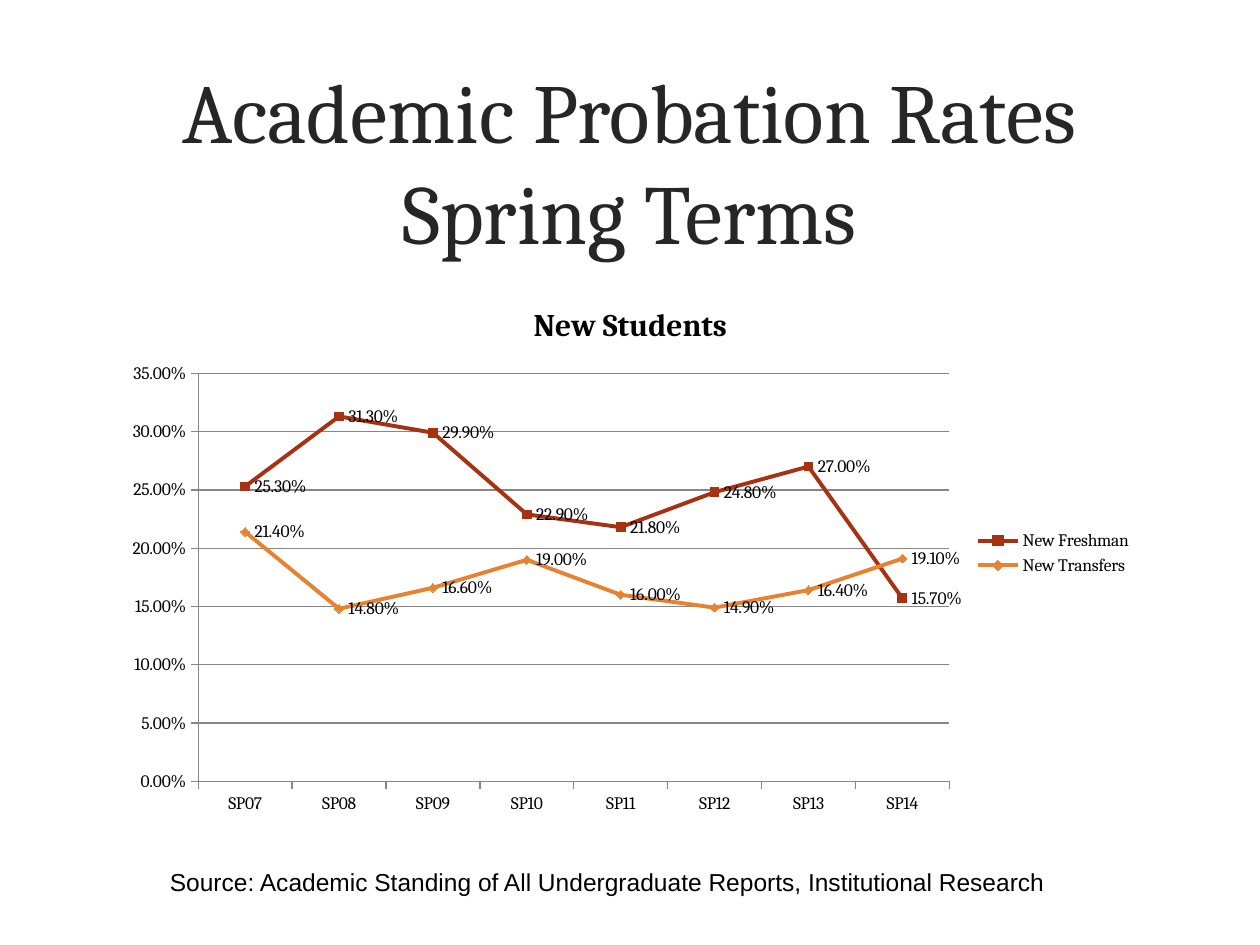
from lxml import etree
from pptx import Presentation
from pptx.chart.data import CategoryChartData
from pptx.dml.color import RGBColor
from pptx.enum.chart import XL_CHART_TYPE, XL_LEGEND_POSITION, XL_LABEL_POSITION, XL_MARKER_STYLE, XL_TICK_MARK
from pptx.enum.text import MSO_ANCHOR, PP_ALIGN
from pptx.oxml import parse_xml
from pptx.oxml.ns import nsdecls
from pptx.util import Pt

COLORS = {"title": "262626", "text": "000000", "axis": "868686",
          "freshman": "A63212", "transfers": "E68230"}
PERCENT = "0.00%"
TERMS = [f"SP{year:02}" for year in range(7, 15)]
RATES = [
    ("New Freshman", "freshman", XL_MARKER_STYLE.SQUARE,
     (0.253, 0.313, 0.299, 0.229, 0.218, 0.248, 0.27, 0.157)),
    ("New Transfers", "transfers", XL_MARKER_STYLE.DIAMOND,
     (0.214, 0.148, 0.166, 0.19, 0.16, 0.149, 0.164, 0.191)),
]


def color(name):
    return RGBColor.from_string(COLORS[name])


def style_font(font, name, size, color_name):
    font.name = name
    font.size = Pt(size)
    font.color.rgb = color(color_name)


def place(shape, box):
    shape.left, shape.top, shape.width, shape.height = (Pt(length) for length in box)


def add_title(page, box):
    title = page.shapes.title
    place(title, box)
    frame = title.text_frame
    frame.word_wrap = True
    frame.vertical_anchor = MSO_ANCHOR.MIDDLE
    para = frame.paragraphs[0]
    para.text = "Academic Probation Rates\vSpring Terms"
    para.alignment = PP_ALIGN.CENTER
    for span in para.runs:
        style_font(span.font, "Cambria", 48, "title")


def set_plot_layout(chart, x, y, width, height):
    """Fix the inner plot area, in fractions of the chart."""
    plot_area = chart.plots[0]._element.getparent()
    for old in plot_area.findall("{*}layout"):
        plot_area.remove(old)
    layout = parse_xml(f"<c:layout {nsdecls('c')}><c:manualLayout/></c:layout>")
    values = [("layoutTarget", "inner"), ("xMode", "edge"), ("yMode", "edge"),
              ("x", x), ("y", y), ("w", width), ("h", height)]
    for tag, value in values:
        item = etree.SubElement(layout[0], f"{{{layout.nsmap['c']}}}{tag}")
        item.set("val", str(value))
    plot_area.insert(0, layout)


def add_rate_chart(page, box):
    data = CategoryChartData(number_format=PERCENT)
    data.categories = TERMS
    for name, _, _, values in RATES:
        data.add_series(name, values)
    chart = page.shapes.add_chart(XL_CHART_TYPE.LINE_MARKERS,
                                  *(Pt(length) for length in box), data).chart
    style_font(chart.font, "Cambria", 10, "text")

    # Title and legend
    chart.has_title = True
    para = chart.chart_title.text_frame.paragraphs[0]
    para.text = "New Students"
    span = para.runs[0]
    style_font(span.font, "Cambria", 18, "text")
    span.font.bold = True
    chart.has_legend = True
    chart.legend.position = XL_LEGEND_POSITION.RIGHT
    chart.legend.include_in_layout = False

    # Axes
    for axis in (chart.category_axis, chart.value_axis):
        axis.major_tick_mark = XL_TICK_MARK.OUTSIDE
        axis.minor_tick_mark = XL_TICK_MARK.NONE
        axis.format.line.color.rgb = color("axis")
        axis.format.line.width = Pt(0.75)
    rate_axis = chart.value_axis
    rate_axis.minimum_scale, rate_axis.maximum_scale = 0, 0.35
    rate_axis.major_unit = 0.05
    rate_axis.tick_labels.number_format = PERCENT
    rate_axis.tick_labels.number_format_is_linked = False
    rate_axis.has_major_gridlines = True
    rate_axis.major_gridlines.format.line.color.rgb = color("axis")
    rate_axis.major_gridlines.format.line.width = Pt(0.75)

    # Series
    plot = chart.plots[0]
    plot.vary_by_categories = False
    for series, (_, color_name, marker, _) in zip(plot.series, RATES):
        series.smooth = False
        series.format.line.color.rgb = color(color_name)
        series.format.line.width = Pt(2.25)
        series.marker.style = marker
        series.marker.size = 5
        series.marker.format.fill.solid()
        series.marker.format.fill.fore_color.rgb = color(color_name)
        series.marker.format.line.color.rgb = color(color_name)
        labels = series.data_labels
        labels.show_value = True
        labels.position = XL_LABEL_POSITION.RIGHT
        labels.number_format = PERCENT
        labels.number_format_is_linked = False
        style_font(labels.font, "Cambria", 10, "text")
    set_plot_layout(chart, 0.08, 0.17, 0.73, 0.75)


def add_source(page, box):
    frame = page.shapes.add_textbox(*(Pt(length) for length in box)).text_frame
    frame.word_wrap = True
    para = frame.paragraphs[0]
    para.text = "Source: Academic Standing of All Undergraduate Reports, Institutional Research"
    style_font(para.runs[0].font, "Arial", 14, "text")


def main():
    deck = Presentation()
    deck.slide_width, deck.slide_height = Pt(720), Pt(540)
    page = deck.slides.add_slide(deck.slide_layouts[5])
    add_rate_chart(page, (66.24, 160.5, 588, 311))
    add_source(page, (90, 492, 540, 24.5))
    add_title(page, (43.2, 34.5, 633, 114))
    deck.save("out.pptx")


if __name__ == "__main__":
    main()
